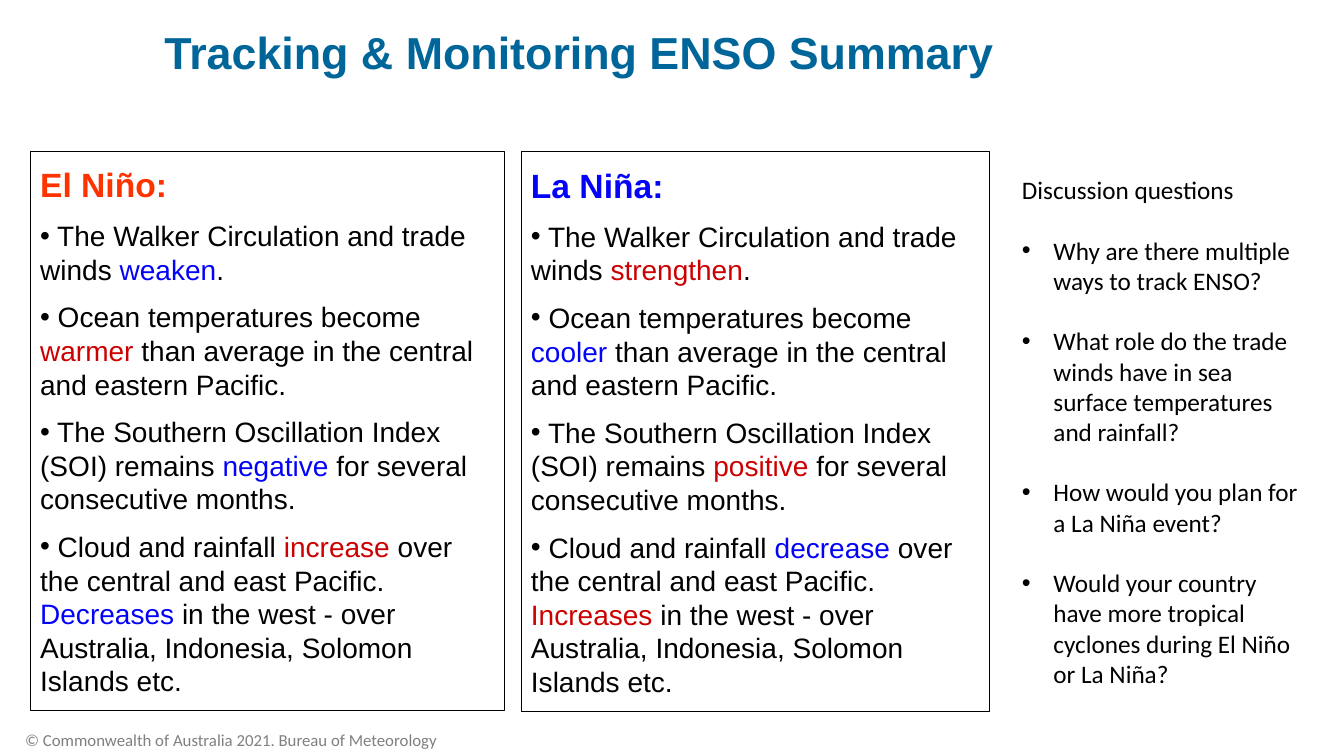
"""Build the ENSO tracking and monitoring summary slide."""
from pptx import Presentation
from pptx.dml.color import RGBColor
from pptx.enum.shapes import MSO_SHAPE as Shape
from pptx.enum.text import MSO_ANCHOR as Anchor, MSO_AUTO_SIZE as AutoSize, PP_ALIGN as Align
from pptx.oxml.xmlchemy import OxmlElement
from pptx.util import Pt

BLACK, BLUE, RED = "000000", "0303F9", "CC0000"
ORANGE, TEAL, GREY = "FF3300", "006699", "808080"

TITLE = "Tracking & Monitoring ENSO Summary"
FOOTER = "© Commonwealth of Australia 2021. Bureau of Meteorology"
EFFECTS = [
    [" The Walker Circulation and trade winds ", "."],
    [" Ocean temperatures become ", " than average in the central and eastern Pacific."],
    [" The Southern Oscillation Index (SOI) remains ", " for several consecutive months."],
    [" Cloud and rainfall ", " over the central and east Pacific. ",
     " in the west - over Australia, Indonesia, Solomon Islands etc."],
]
PANELS = [
    ("El Niño:", ORANGE, (21.6, 108, 339.1, 399.6),
     [[("weaken", BLUE)], [("warmer", RED)], [("negative", BLUE)],
      [("increase", RED), ("Decreases", BLUE)]]),
    ("La Niña:", BLUE, (372.2, 108.4, 334.8, 399.6),
     [[("strengthen", RED)], [("cooler", BLUE)], [("positive", RED)],
      [("decrease", BLUE), ("Increases", RED)]]),
]
QUESTIONS = [
    "Why are there multiple ways to track ENSO?",
    "What role do the trade winds have in sea surface temperatures and rainfall?",
    "How would you plan for a La Niña event?",
    "Would your country have more tropical cyclones during El Niño or La Niña?",
]


def color(value):
    return RGBColor.from_string(value)


def place(shape, area):
    shape.left, shape.top, shape.width, shape.height = map(Pt, area)


def prepare(shape, anchor=Anchor.TOP):
    frame = shape.text_frame
    frame.word_wrap = True
    frame.auto_size = AutoSize.NONE
    frame.vertical_anchor = anchor
    frame.margin_left = frame.margin_right = Pt(7.2)
    frame.margin_top = frame.margin_bottom = Pt(3.6)
    return frame


def add_para(frame, runs, size, font="Arial", bold=False, before=0, hanging=None, spacing=None):
    first = not frame.paragraphs[0].runs
    para = frame.paragraphs[0] if first else frame.add_paragraph()
    para.alignment = Align.LEFT
    para.space_before = Pt(before)
    if spacing:
        para.line_spacing = spacing
    if hanging is not None:
        props = para._p.get_or_add_pPr()
        props.set("marL", str(Pt(hanging)))
        props.set("indent", str(-Pt(hanging)))
        for tag, key, value in (("a:buFont", "typeface", "Arial"), ("a:buChar", "char", "•")):
            element = OxmlElement(tag)
            element.set(key, value)
            props.append(element)
    for text, shade in runs:
        span = para.add_run()
        span.text = text
        span.font.name, span.font.size, span.font.bold = font, Pt(size), bold
        span.font.color.rgb = color(shade)


def add_box(page, area):
    box = page.shapes.add_textbox(*map(Pt, area))
    return prepare(box)


def add_panel(page, heading, shade, area, changes):
    panel = page.shapes.add_shape(Shape.RECTANGLE, *map(Pt, area))
    panel.shadow.inherit = False
    panel.fill.background()
    panel.line.color.rgb = color(BLACK)
    panel.line.width = Pt(0.75)
    frame = prepare(panel, Anchor.MIDDLE)
    add_para(frame, [(heading, shade)], 24, bold=True)
    for texts, words in zip(EFFECTS, changes):
        runs = [(texts[0], BLACK)]
        for word, text in zip(words, texts[1:]):
            runs += [word, (text, BLACK)]
        add_para(frame, runs, 20, before=10, hanging=0)


def main():
    deck = Presentation()
    deck.slide_width, deck.slide_height = Pt(960), Pt(540)
    page = deck.slides.add_slide(deck.slide_layouts[5])

    title = page.shapes.title
    place(title, (110.2, 18.7, 821.5, 82.8))
    add_para(prepare(title), [(TITLE, TEAL)], 32, bold=True, spacing=0.9)

    footer = add_box(page, (10.8, 520.6, 313.2, 19.4))
    add_para(footer, [(FOOTER, GREY)], 12, "Calibri", spacing=0.8)

    for panel in PANELS:
        add_panel(page, *panel)

    discussion = add_box(page, (722.9, 121, 216, 378))
    add_para(discussion, [("Discussion questions", BLACK)], 18, "Calibri")
    for question in QUESTIONS:
        add_para(discussion, [(question, BLACK)], 18, "Calibri", before=21.6, hanging=22.5)

    deck.save("out.pptx")


if __name__ == "__main__":
    main()
